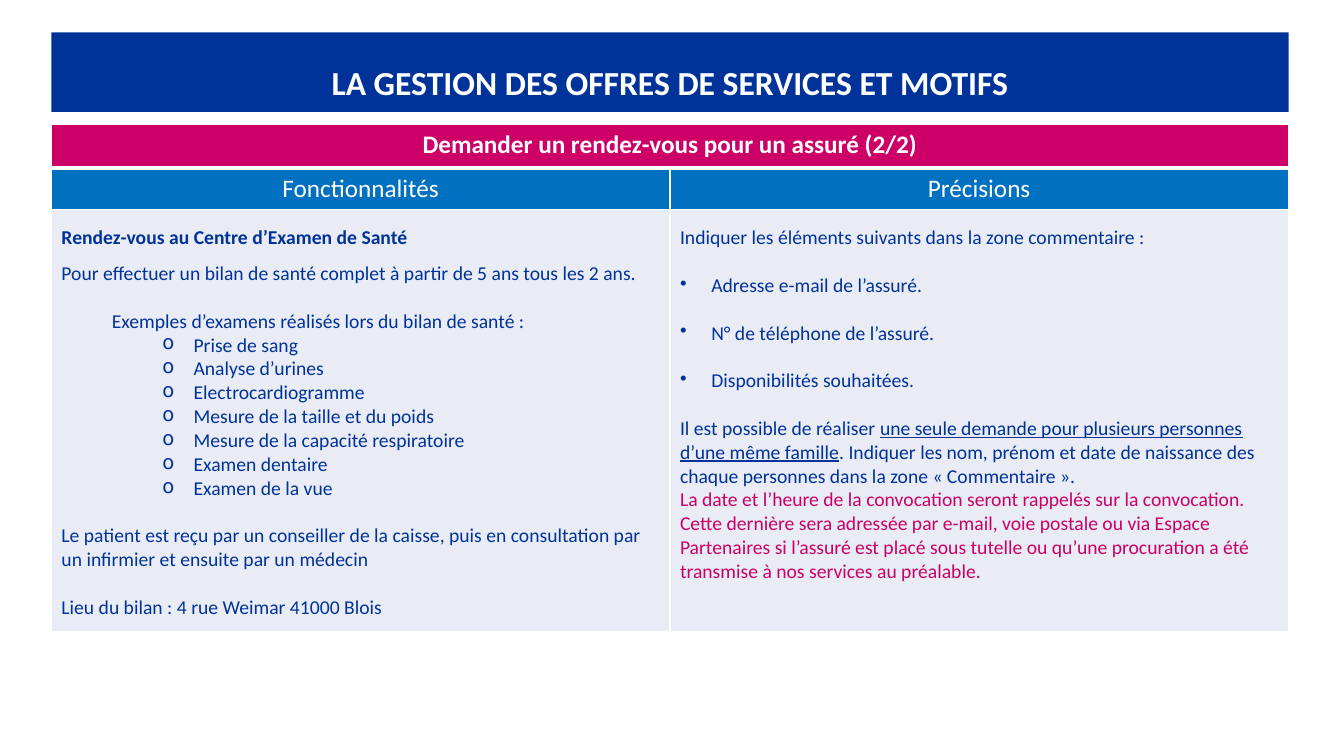
import pptx
import pptx.dml.color
import pptx.enum.text
import pptx.oxml
import pptx.oxml.ns
import pptx.util
from lxml import etree

RGBColor = pptx.dml.color.RGBColor
ALIGN = pptx.enum.text.PP_ALIGN
ANCHOR = pptx.enum.text.MSO_ANCHOR

NAVY = RGBColor(0x00, 0x33, 0x99)
PINK = RGBColor(0xCC, 0x00, 0x66)
BLUE = RGBColor(0x00, 0x70, 0xC0)
PALE = RGBColor(0xE9, 0xEB, 0xF5)
WHITE = RGBColor(0xFF, 0xFF, 0xFF)

FONT = "Calibri"
GAP = 17  # height in points of one line of body text
LEFT, WIDTH = 51, 1227

EXAMS = [
    "Prise de sang",
    "Analyse d’urines",
    "Electrocardiogramme",
    "Mesure de la taille et du poids",
    "Mesure de la capacité respiratoire",
    "Examen dentaire",
    "Examen de la vue",
]
CONTACT_DETAILS = [
    "Adresse e-mail de l’assuré.",
    "N° de téléphone de l’assuré.",
    "Disponibilités souhaitées.",
]


def px(n):
    return pptx.util.Emu(n * 9144)


def write(tf, text, size=14, color=NAVY, bold=False, align=ALIGN.LEFT, spacing=1.0,
          before=0, margin=0, bullet=None, underlined=None):
    """Add a paragraph to tf; the part of text equal to underlined is underlined."""
    p = tf.paragraphs[0] if not tf.text else tf.add_paragraph()
    p.alignment = align
    p.line_spacing = spacing
    p.space_before = pptx.util.Pt(before)
    pPr = p._p.get_or_add_pPr()
    pPr.set("marL", str(px(margin)))
    pPr.set("indent", str(px(-31 if bullet else 0)))
    if bullet:
        etree.SubElement(pPr, pptx.oxml.ns.qn("a:buChar")).set("char", bullet)
    else:
        etree.SubElement(pPr, pptx.oxml.ns.qn("a:buNone"))
    if underlined:
        start, end = text.split(underlined)
        parts = [start, underlined, end]
    else:
        parts = [text]
    for part in parts:
        r = p.add_run()
        r.text = part
        r.font.name = FONT
        r.font.size = pptx.util.Pt(size)
        r.font.bold = bold
        r.font.color.rgb = color
        r.font.underline = part == underlined


def set_borders(cell, **widths):
    """Draw white borders, 1 point wide unless a side (L, R, T, B) is given."""
    tcPr = cell._tc.get_or_add_tcPr()
    for side in "LRTB":
        width = pptx.util.Pt(widths.get(side, 1))
        tcPr.append(pptx.oxml.parse_xml(
            f'<a:ln{side} {pptx.oxml.ns.nsdecls("a")} w="{width}"><a:solidFill>'
            f'<a:srgbClr val="{WHITE}"/></a:solidFill></a:ln{side}>'))


def set_fill(target, color):
    target.fill.solid()
    target.fill.fore_color.rgb = color


def add_title(s, text):
    sp = s.shapes.title
    sp.left, sp.top, sp.width, sp.height = px(LEFT), px(32), px(WIDTH), px(79)
    set_fill(sp, NAVY)
    tf = sp.text_frame
    tf.word_wrap = True
    tf.auto_size = pptx.enum.text.MSO_AUTO_SIZE.NONE
    tf.vertical_anchor = ANCHOR.MIDDLE
    write(tf, text, size=24, color=WHITE, bold=True, align=ALIGN.CENTER, spacing=1.5)


def add_grid(s):
    heights = [44, 40, 419]
    fills = [PINK, BLUE, PALE]
    table = s.shapes.add_table(3, 2, px(LEFT), px(123), px(WIDTH), px(sum(heights))).table
    for i, (height, fill) in enumerate(zip(heights, fills)):
        table.rows[i].height = px(height)
        for cell in table.rows[i].cells:
            set_borders(cell, **({"B": 3}, {"T": 3}, {})[i])
            set_fill(cell, fill)
    table.cell(0, 0).merge(table.cell(0, 1))
    return table


def write_features(tf):
    write(tf, "Rendez-vous au Centre d’Examen de Santé", bold=True, spacing=1.5)
    write(tf, "Pour effectuer un bilan de santé complet à partir de 5 ans tous les 2 ans.",
          spacing=1.5)
    write(tf, "Exemples d’examens réalisés lors du bilan de santé :", before=GAP, margin=50)
    for exam in EXAMS:
        write(tf, exam, margin=131, bullet="o")
    write(tf, "Le patient est reçu par un conseiller de la caisse, puis en consultation par "
          "un infirmier et ensuite par un médecin", before=GAP)
    write(tf, "Lieu du bilan : 4 rue Weimar 41000 Blois", before=GAP)


def write_details(tf):
    write(tf, "Indiquer les éléments suivants dans la zone commentaire :", spacing=1.5)
    for detail in CONTACT_DETAILS:
        write(tf, detail, before=GAP, margin=31, bullet="•")
    write(tf, "Il est possible de réaliser une seule demande pour plusieurs personnes "
          "d’une même famille. Indiquer les nom, prénom et date de naissance des "
          "chaque personnes dans la zone « Commentaire ».", before=GAP,
          underlined="une seule demande pour plusieurs personnes d’une même famille")
    write(tf, "La date et l’heure de la convocation seront rappelés sur la convocation.",
          color=PINK)
    write(tf, "Cette dernière sera adressée par e-mail, voie postale ou via Espace "
          "Partenaires si l’assuré est placé sous tutelle ou qu’une procuration a été "
          "transmise à nos services au préalable.", color=PINK)


def main():
    prs = pptx.Presentation()
    prs.slide_width = pptx.util.Inches(13.33)
    prs.slide_height = pptx.util.Inches(7.5)
    s = prs.slides.add_slide(prs.slide_layouts[5])

    add_title(s, "LA GESTION DES OFFRES DE SERVICES ET MOTIFS")
    table = add_grid(s)
    heading = dict(size=18, color=WHITE, align=ALIGN.CENTER)
    write(table.cell(0, 0).text_frame, "Demander un rendez-vous pour un assuré (2/2)",
          bold=True, **heading)
    for col, text in enumerate(["Fonctionnalités", "Précisions"]):
        write(table.cell(1, col).text_frame, text, **heading)
    write_features(table.cell(2, 0).text_frame)
    write_details(table.cell(2, 1).text_frame)

    prs.save("out.pptx")


if __name__ == "__main__":
    main()
